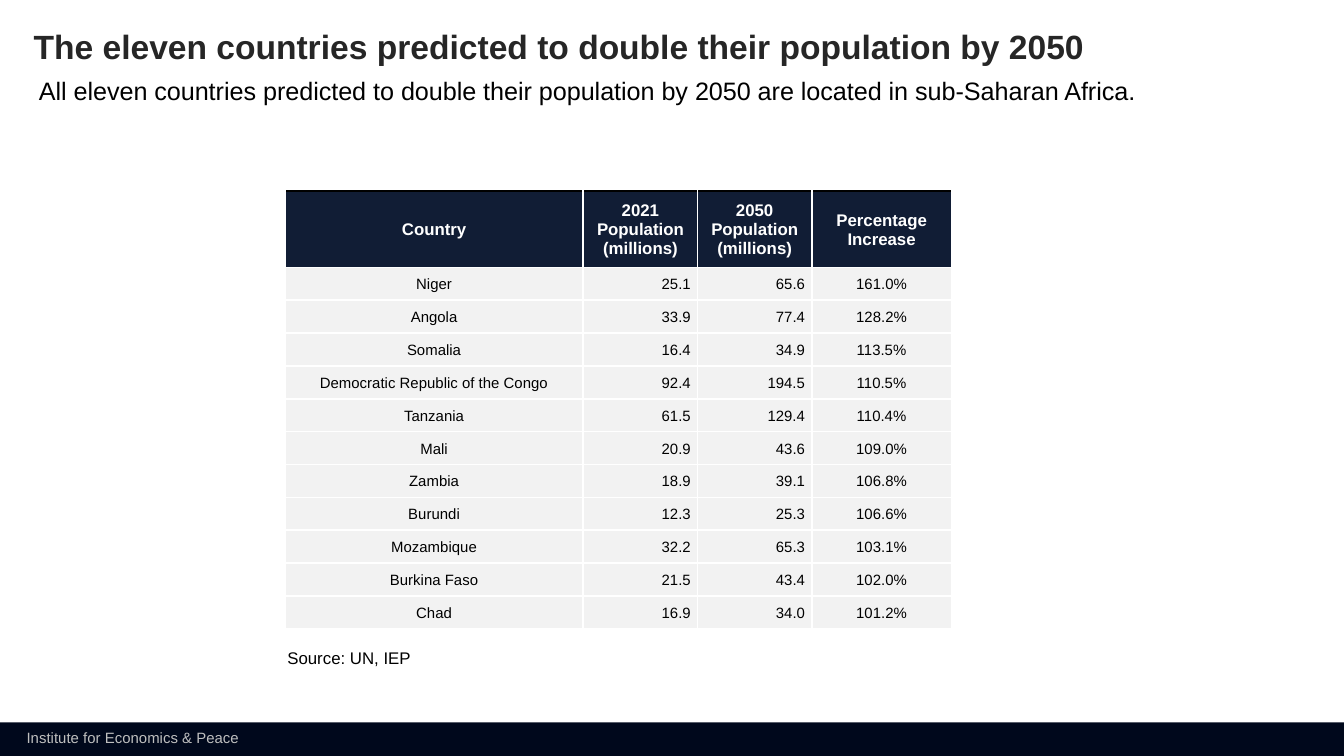
from lxml import etree
from pptx import Presentation
from pptx.dml.color import RGBColor
from pptx.enum.shapes import MSO_SHAPE
from pptx.enum.text import MSO_ANCHOR, MSO_AUTO_SIZE, PP_ALIGN
from pptx.oxml.ns import qn
from pptx.util import Inches, Pt

RECTANGLE = MSO_SHAPE.RECTANGLE
MIDDLE = MSO_ANCHOR.MIDDLE
NO_FIT, GROW = MSO_AUTO_SIZE.NONE, MSO_AUTO_SIZE.SHAPE_TO_FIT_TEXT
LEFT, CENTER, RIGHT = PP_ALIGN.LEFT, PP_ALIGN.CENTER, PP_ALIGN.RIGHT

BLACK = RGBColor(0x00, 0x00, 0x00)
WHITE = RGBColor(0xFF, 0xFF, 0xFF)
CHARCOAL = RGBColor(0x26, 0x26, 0x26)
SILVER = RGBColor(0xBF, 0xBF, 0xBF)
NAVY = RGBColor(0x11, 0x1D, 0x35)
MIDNIGHT = RGBColor(0x00, 0x08, 0x1C)
PALE_GREY = RGBColor(0xF2, 0xF2, 0xF2)

TITLE = "The eleven countries predicted to double their population by 2050"
CAPTIONS = [
    ("Institute for Economics & Peace", (0.1, 5.37, 1.8, 0.24), 8, SILVER),
    ("All eleven countries predicted to double their population by 2050 "
     "are located in sub-Saharan Africa.", (0.19, 0.51, 8.48, 0.33), 13.5, BLACK),
    ("Source: UN, IEP", (2.04, 4.77, 1.16, 0.25), 9, BLACK),
]
POPULATION = [
    ("Country", "2021 Population (millions)", "2050 Population (millions)", "Percentage Increase"),
    ("Niger", "25.1", "65.6", "161.0%"),
    ("Angola", "33.9", "77.4", "128.2%"),
    ("Somalia", "16.4", "34.9", "113.5%"),
    ("Democratic Republic of the Congo", "92.4", "194.5", "110.5%"),
    ("Tanzania", "61.5", "129.4", "110.4%"),
    ("Mali", "20.9", "43.6", "109.0%"),
    ("Zambia", "18.9", "39.1", "106.8%"),
    ("Burundi", "12.3", "25.3", "106.6%"),
    ("Mozambique", "32.2", "65.3", "103.1%"),
    ("Burkina Faso", "21.5", "43.4", "102.0%"),
    ("Chad", "16.9", "34.0", "101.2%"),
]
TABLE_BOX = (2.12, 1.42, 4.95, 3.26)
COLUMN_WIDTHS = (2.22, 0.85, 0.85, 1.04)
COLUMN_ALIGNMENTS = (CENTER, RIGHT, RIGHT, CENTER)
HEADER_HEIGHT = 0.57
HEADER_FORMAT = {"size": Pt(9), "bold": True, "color": WHITE}
BODY_FORMAT = {"size": Pt(8), "bold": False, "color": BLACK}


def inches(box):
    """Convert a box of numbers to lengths."""
    return [Inches(value) for value in box]


def set_all(target, values):
    """Set each named attribute on the target."""
    for name, value in values.items():
        setattr(target, name, value)


def style_text(paragraph, align, size, color, bold=False):
    """Format one paragraph."""
    paragraph.alignment = align
    set_all(paragraph.font, {"name": "Arial", "size": size, "bold": bold})
    paragraph.font.color.rgb = color


def add_borders(cell, top_color):
    """Give a cell white one-point borders with its own top colour."""
    properties = cell._tc.get_or_add_tcPr()
    colors = {"lnL": WHITE, "lnR": WHITE, "lnT": top_color, "lnB": WHITE}
    for side, color in colors.items():
        line = etree.SubElement(properties, qn(f"a:{side}"), w=str(Pt(1)))
        fill = etree.SubElement(line, qn("a:solidFill"))
        etree.SubElement(fill, qn("a:srgbClr"), val=str(color))


def add_title(slide):
    """Place the title placeholder."""
    title = slide.shapes.title
    left, top, width, height = inches((0.19, 0.22, 8.83, 0.28))
    set_all(title, {"left": left, "top": top, "width": width, "height": height})
    frame = title.text_frame
    frame.text = TITLE
    set_all(frame, {"margin_left": Inches(0.06), "margin_right": 0, "margin_top": 0,
                    "margin_bottom": 0, "vertical_anchor": MIDDLE,
                    "word_wrap": True, "auto_size": NO_FIT})
    heading = frame.paragraphs[0]
    heading.line_spacing = 0.9
    style_text(heading, LEFT, Pt(18), CHARCOAL, True)


def add_caption(slide, text, box, size, color):
    """Add one single-line text box."""
    frame = slide.shapes.add_textbox(*inches(box)).text_frame
    frame.text = text
    set_all(frame, {"word_wrap": False, "auto_size": GROW})
    style_text(frame.paragraphs[0], LEFT, Pt(size), color)


def add_population_table(slide):
    """Add the table of countries."""
    table = slide.shapes.add_table(
        len(POPULATION), len(COLUMN_WIDTHS), *inches(TABLE_BOX)).table
    for column, width in zip(table.columns, COLUMN_WIDTHS):
        column.width = Inches(width)
    body_height = (TABLE_BOX[3] - HEADER_HEIGHT) / (len(POPULATION) - 1)
    for row_index, values in enumerate(POPULATION):
        header = row_index == 0
        table.rows[row_index].height = Inches(HEADER_HEIGHT if header else body_height)
        for column_index, value in enumerate(values):
            cell = table.cell(row_index, column_index)
            align = CENTER if header else COLUMN_ALIGNMENTS[column_index]
            cell.text = value
            set_all(cell, {"vertical_anchor": MIDDLE, "margin_left": Inches(0.01),
                           "margin_right": Inches(0.05 if align == RIGHT else 0.01),
                           "margin_top": Inches(0.01), "margin_bottom": 0})
            add_borders(cell, BLACK if header else WHITE)
            cell.fill.solid()
            cell.fill.fore_color.rgb = NAVY if header else PALE_GREY
            style_text(cell.text_frame.paragraphs[0], align,
                       **(HEADER_FORMAT if header else BODY_FORMAT))


def main():
    """Build the population slide."""
    deck = Presentation()
    deck.slide_width = Inches(10)
    deck.slide_height = deck.slide_width * 9 // 16
    slide = deck.slides.add_slide(deck.slide_layouts[5])
    band_height = Inches(0.25)
    footer_band = slide.shapes.add_shape(
        RECTANGLE, 0, deck.slide_height - band_height, deck.slide_width, band_height)
    footer_band.shadow.inherit = False
    footer_band.fill.solid()
    footer_band.fill.fore_color.rgb = MIDNIGHT
    footer_band.line.fill.background()
    add_title(slide)
    for caption in CAPTIONS:
        add_caption(slide, *caption)
    add_population_table(slide)
    deck.save("out.pptx")


if __name__ == "__main__":
    main()
